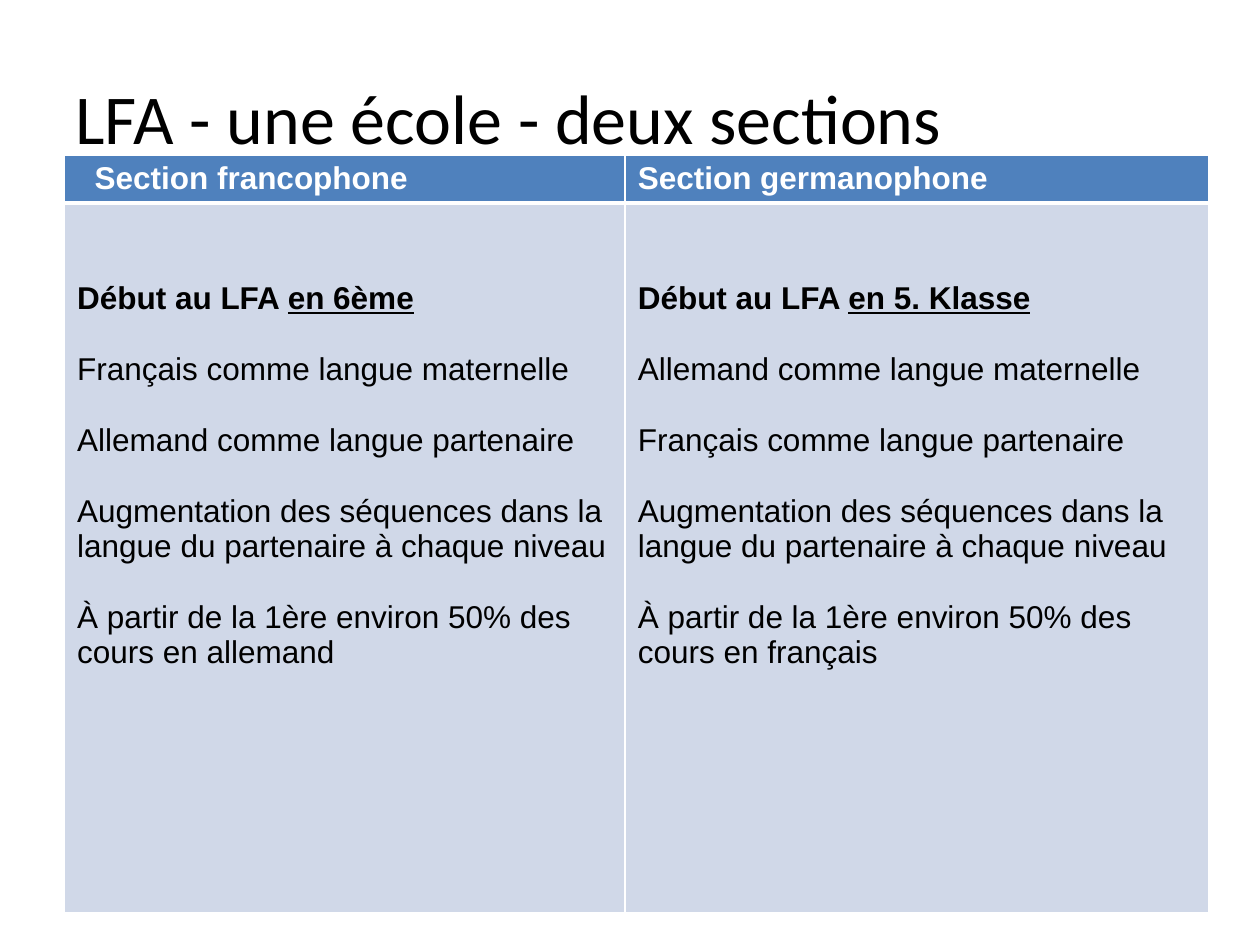
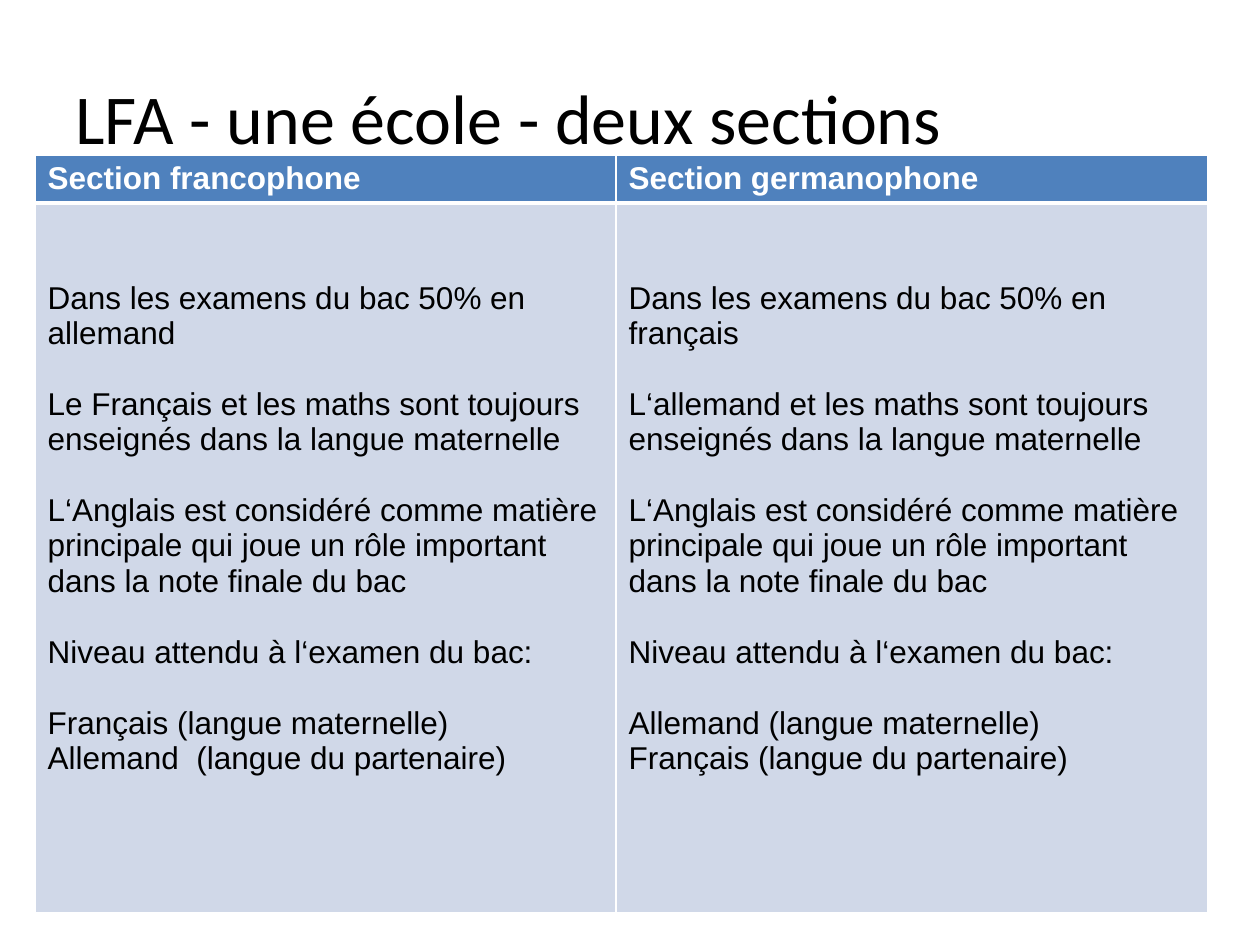
from lxml.etree import SubElement
from pptx import Presentation
from pptx.dml.color import RGBColor
from pptx.enum.text import MSO_ANCHOR, PP_ALIGN
from pptx.oxml.ns import qn
from pptx.util import Pt

WHITE = RGBColor(0xFF, 0xFF, 0xFF)
BLACK = RGBColor(0x00, 0x00, 0x00)
HEADER_BLUE = RGBColor(0x4F, 0x81, 0xBD)
BODY_BLUE = RGBColor(0xD0, 0xD8, 0xE8)

TITLE = "LFA - une école - deux sections"
SECTIONS = ("Section francophone", "Section germanophone")
TITLE_BOX = (Pt(36), Pt(21.6), Pt(648), Pt(90))
TABLE_TOP = Pt(88.5)
ROW_HEIGHTS = (Pt(27.5), Pt(405.5))
TEXT_SIZE = Pt(18)
LINE = Pt(20.4)
MARGIN_TOP = Pt(3.6)
MARGIN_LEFT = Pt(7.2)
THIN, THICK = Pt(1), Pt(3)


def start_of_school(grade, mother_tongue, partner_language):
    """Groups of paragraphs; a paragraph is a list of (text, bold, underline)."""
    statements = (
        f"{mother_tongue} comme langue maternelle",
        f"{partner_language} comme langue partenaire",
        "Augmentation des séquences dans la langue du partenaire à chaque niveau",
        f"À partir de la 1ère environ 50% des cours en {partner_language.lower()}",
    )
    opening = [("Début au LFA ", True, False), (grade, True, True)]
    return [[opening]] + [[plain(statement)] for statement in statements]


def final_exams(core_subject, mother_tongue, partner_language, partner_level):
    groups = (
        [f"Dans les examens du bac 50% en {partner_language}"],
        [f"{core_subject} et les maths sont toujours enseignés dans la langue maternelle"],
        ["L‘Anglais est considéré comme matière principale qui joue un rôle "
         "important dans la note finale du bac"],
        ["Niveau attendu à l‘examen du bac:"],
        [f"{mother_tongue} (langue maternelle)",
         f"{partner_level} (langue du partenaire)"],
    )
    return [[plain(line) for line in group] for group in groups]


def plain(text):
    return [(text, False, False)]


def add_run(paragraph, text, font_name, size, color, bold=False, underline=False):
    run = paragraph.add_run()
    run.text = text
    font = run.font
    font.name, font.size, font.bold = font_name, size, bold
    font.underline = underline
    font.color.rgb = color


def style_cell(cell, fill_color, top, bottom):
    """Draw the white borders, then fill, as the schema orders them."""
    properties = cell._tc.get_or_add_tcPr()
    for side, width in (("L", THIN), ("R", THIN), ("T", top), ("B", bottom)):
        border = SubElement(properties, qn(f"a:ln{side}"), w=str(width))
        color = SubElement(border, qn("a:solidFill"))
        SubElement(color, qn("a:srgbClr"), val=str(WHITE))
    cell.fill.solid()
    cell.fill.fore_color.rgb = fill_color


def fill_header(cell, section, indent):
    style_cell(cell, HEADER_BLUE, THIN, THICK)
    cell.margin_left = MARGIN_LEFT + indent
    add_run(cell.text_frame.paragraphs[0], section, "Arial", TEXT_SIZE, WHITE, bold=True)


def fill_body(cell, groups):
    """One empty line separates groups; two stand above the first."""
    style_cell(cell, BODY_BLUE, THICK, THIN)
    cell.margin_top = MARGIN_TOP + 2 * LINE
    frame = cell.text_frame
    for group_index, group in enumerate(groups):
        for line_index, runs in enumerate(group):
            if group_index == line_index == 0:
                paragraph = frame.paragraphs[0]
            else:
                paragraph = frame.add_paragraph()
                paragraph.space_before = Pt(0) if line_index else LINE
            for text, bold, underline in runs:
                add_run(paragraph, text, "Arial", TEXT_SIZE, BLACK, bold, underline)


def add_title(slide, box):
    title = slide.shapes.title
    title.left, title.top, title.width, title.height = box
    title.text_frame.vertical_anchor = MSO_ANCHOR.MIDDLE
    paragraph = title.text_frame.paragraphs[0]
    paragraph.alignment = PP_ALIGN.LEFT
    add_run(paragraph, TITLE, "Calibri", Pt(40), BLACK)


def add_comparison(slide, left, column_widths, bodies, first_indent):
    table = slide.shapes.add_table(
        2, 2, left, TABLE_TOP, sum(column_widths), sum(ROW_HEIGHTS)).table
    table.horz_banding = False
    for row, height in zip(table.rows, ROW_HEIGHTS):
        row.height = height
    indents = (first_indent, Pt(0))
    for index, width in enumerate(column_widths):
        table.columns[index].width = width
        fill_header(table.cell(0, index), SECTIONS[index], indents[index])
        fill_body(table.cell(1, index), bodies[index])


def add_comparison_slide(deck, left, column_widths, bodies, first_indent=Pt(0)):
    slide = deck.slides.add_slide(deck.slide_layouts[5])
    add_title(slide, TITLE_BOX)
    add_comparison(slide, left, column_widths, bodies, first_indent)


def main():
    deck = Presentation()
    deck.slide_width, deck.slide_height = Pt(720), Pt(540)
    add_comparison_slide(
        deck, Pt(36.9), (Pt(320.4), Pt(333.4)),
        (start_of_school("en 6ème", "Français", "Allemand"),
         start_of_school("en 5. Klasse", "Allemand", "Français")),
        first_indent=Pt(10))
    add_comparison_slide(
        deck, Pt(20), (Pt(332), Pt(338.4)),
        (final_exams("Le Français", "Français", "allemand", "Allemand "),
         final_exams("L‘allemand", "Allemand", "français", "Français")))
    deck.save("out.pptx")


if __name__ == "__main__":
    main()
